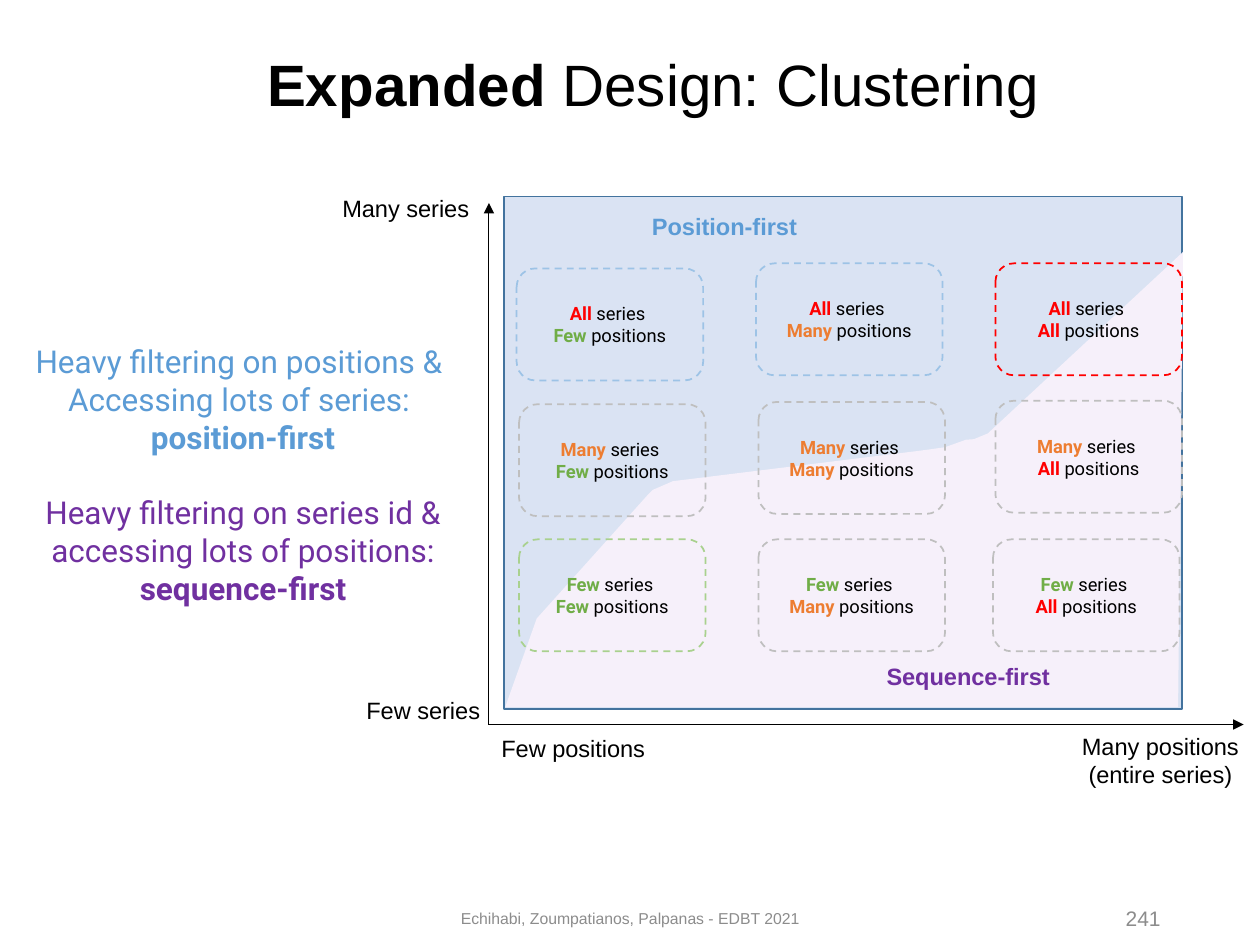
from typing import NamedTuple

from lxml import etree
from pptx import Presentation
from pptx import util as u
from pptx.dml.color import RGBColor
from pptx.enum import dml, shapes, text
from pptx.oxml import ns

Pt = u.Pt
BLACK, BLUE, PURPLE, GREY = "000000", "5B9BD5", "7030A0", "8C8C8C"
PALE_BLUE, SILVER, RED, LIME = "9DC3E6", "BFBFBF", "FF0000", "A9D18E"
AMOUNT_COLORS = {"All": RED, "Many": "ED7D31", "Few": "70AD47"}
LEFT, CENTER, RIGHT = text.PP_ALIGN.LEFT, text.PP_ALIGN.CENTER, text.PP_ALIGN.RIGHT
TOP, MIDDLE = text.MSO_ANCHOR.TOP, text.MSO_ANCHOR.MIDDLE
RECT, ROUNDED = shapes.MSO_SHAPE.RECTANGLE, shapes.MSO_SHAPE.ROUNDED_RECTANGLE


class Run(NamedTuple):
    words: str
    color: str = BLACK
    bold: bool = False


class Box(NamedTuple):
    left: float
    top: float
    width: float
    height: float


class Cell(NamedTuple):
    left: float
    top: float
    series: str
    positions: str
    edge: str


class Label(NamedTuple):
    box: Box
    lines: list
    size: float = 13.5
    align: int = LEFT
    anchor: int = TOP
    wrap: bool = False


CELLS = [
    Cell(295.2, 153.4, "All", "Few", PALE_BLUE),
    Cell(432, 150.5, "All", "Many", PALE_BLUE),
    Cell(568.8, 150.5, "All", "All", RED),
    Cell(296.6, 231, "Many", "Few", SILVER),
    Cell(433.4, 229.7, "Many", "Many", SILVER),
    Cell(568.8, 229, "Many", "All", SILVER),
    Cell(296.6, 308.2, "Few", "Few", LIME),
    Cell(433.4, 308.2, "Few", "Many", SILVER),
    Cell(567.4, 308.2, "Few", "All", SILVER),
]
LABELS = [
    Label(Box(610.6, 414.7, 105, 40), [[Run("Many positions")], [Run("(entire series)")]],
          align=CENTER),
    Label(Box(188.6, 107.3, 88, 24), [[Run("Many series")]]),
    Label(Box(202.3, 394, 80.5, 24), [[Run("Few series")]]),
    Label(Box(279.4, 416, 98, 24), [[Run("Few positions")]]),
    Label(Box(238.3, 510.5, 243.4, 28.8),
          [[Run("Echihabi, Zoumpatianos, Palpanas - EDBT 2021", GREY)]], 9, CENTER, MIDDLE, True),
    Label(Box(508.3, 510.5, 162, 28.8), [[Run("241", GREY)]], 12, RIGHT, MIDDLE, True),
]
REGION_EDGE = [
    (676, 144), (564.5, 247.7), (556.5, 251), (552, 251.3), (540, 255.6), (530, 257),
    (524, 257.8), (384.5, 275), (373, 280), (370, 283), (306.7, 353.5), (288.7, 404),
    (673.2, 404),
]


def rgb(value: str) -> RGBColor:
    return RGBColor.from_string(value)


def places(box: Box) -> list:
    return [Pt(length) for length in box]


def write(shape, lines: list, size: float, font: str = "Arial", align: int = CENTER,
          anchor: int = MIDDLE, wrap: bool = True) -> None:
    frame = shape.text_frame
    frame.word_wrap, frame.vertical_anchor = wrap, anchor
    for index, line in enumerate(lines):
        paragraph = frame.add_paragraph() if index else frame.paragraphs[0]
        paragraph.alignment = align
        for part in line:
            run = paragraph.add_run()
            run.text = part.words
            font_format = {"name": font, "size": Pt(size), "bold": part.bold}
            for key, value in font_format.items():
                setattr(run.font, key, value)
            run.font.color.rgb = rgb(part.color)


def paint(shape, fill: str = "", edge: str = "", dashed: bool = False) -> None:
    shape.shadow.inherit = False
    if fill:
        shape.fill.solid()
        shape.fill.fore_color.rgb = rgb(fill)
    else:
        shape.fill.background()
    if edge:
        shape.line.color.rgb = rgb(edge)
        shape.line.width = Pt(1)
        if dashed:
            shape.line.dash_style = dml.MSO_LINE.DASH
    else:
        shape.line.fill.background()


def draw_axis(slide, end_x: float, end_y: float) -> None:
    axis = slide.shapes.add_connector(
        shapes.MSO_CONNECTOR.STRAIGHT, Pt(279.4), Pt(414), Pt(end_x), Pt(end_y))
    axis.line.color.rgb = rgb(BLACK)
    axis.line.width = Pt(0.5)
    etree.SubElement(axis.line._get_or_add_ln(), ns.qn("a:tailEnd"), type="triangle")
    etree.SubElement(axis._element.spPr, ns.qn("a:effectLst"))


def draw_region(slide) -> None:
    corners = [(Pt(x), Pt(y)) for x, y in REGION_EDGE]
    builder = slide.shapes.build_freeform(*corners[0])
    builder.add_line_segments(corners[1:], close=True)
    paint(builder.convert_to_shape(), "F6F0FA")


def draw_label(slide, label: Label) -> None:
    holder = slide.shapes.add_textbox(*places(label.box))
    write(holder, label.lines, label.size, align=label.align, anchor=label.anchor,
          wrap=label.wrap)


def draw_region_name(slide, box: Box, words: str, color: str) -> None:
    pill = slide.shapes.add_shape(ROUNDED, *places(box))
    pill.adjustments[0] = 0.5
    paint(pill)
    write(pill, [[Run(words, color, True)]], 13.5)


def draw_cell(slide, cell: Cell) -> None:
    frame = slide.shapes.add_shape(ROUNDED, *places(Box(cell.left, cell.top, 106.6, 64)))
    paint(frame, edge=cell.edge, dashed=True)
    amounts = [(cell.series, "series "), (cell.positions, "positions")]
    write(frame, [[Run(f"{amount} ", AMOUNT_COLORS[amount], True), Run(noun)]
                  for amount, noun in amounts], 10.5, "Roboto")


def draw_summary(slide) -> None:
    summary = slide.shapes.add_shape(RECT, *places(Box(5, 170.6, 267.8, 203.8)))
    paint(summary, "FFFFFF")
    write(summary, [
        [Run("Heavy filtering on positions & ", BLUE)],
        [Run("Accessing lots of series: ", BLUE)],
        [Run("position-first", BLUE, True)],
        [Run("Heavy filtering on series id & accessing lots of positions: ", PURPLE),
         Run("sequence-first", PURPLE, True)],
    ], 18, "Roboto", anchor=TOP)
    summary.text_frame.margin_top = Pt(25)
    summary.text_frame.paragraphs[-1].space_before = Pt(21.5)


def place_title(slide) -> None:
    title = slide.shapes.title
    title_format = dict(zip(("left", "top", "width", "height"), places(Box(130.3, 16, 486, 67.7))))
    for key, value in title_format.items():
        setattr(title, key, value)
    write(title, [[Run("Expanded", bold=True), Run(" Design: Clustering")]], 33.3)
    title.text_frame.paragraphs[0].line_spacing = 0.9


def main() -> None:
    deck = Presentation()
    deck.slide_width, deck.slide_height = Pt(720), Pt(540)
    slide = deck.slides.add_slide(deck.slide_layouts[5])
    place_title(slide)
    plane = slide.shapes.add_shape(RECT, *places(Box(288, 112.3, 387.4, 293)))
    paint(plane, "DAE3F3", "43739E")
    draw_region(slide)
    draw_axis(slide, 710.6, 414)
    draw_axis(slide, 279.4, 116)
    draw_region_name(slide, Box(348.5, 110.2, 131, 38.2), "Position-first", BLUE)
    draw_region_name(slide, Box(478.8, 370.8, 149, 31), "Sequence-first", PURPLE)
    for cell in CELLS:
        draw_cell(slide, cell)
    draw_summary(slide)
    for label in LABELS:
        draw_label(slide, label)
    deck.save("out.pptx")


if __name__ == "__main__":
    main()
